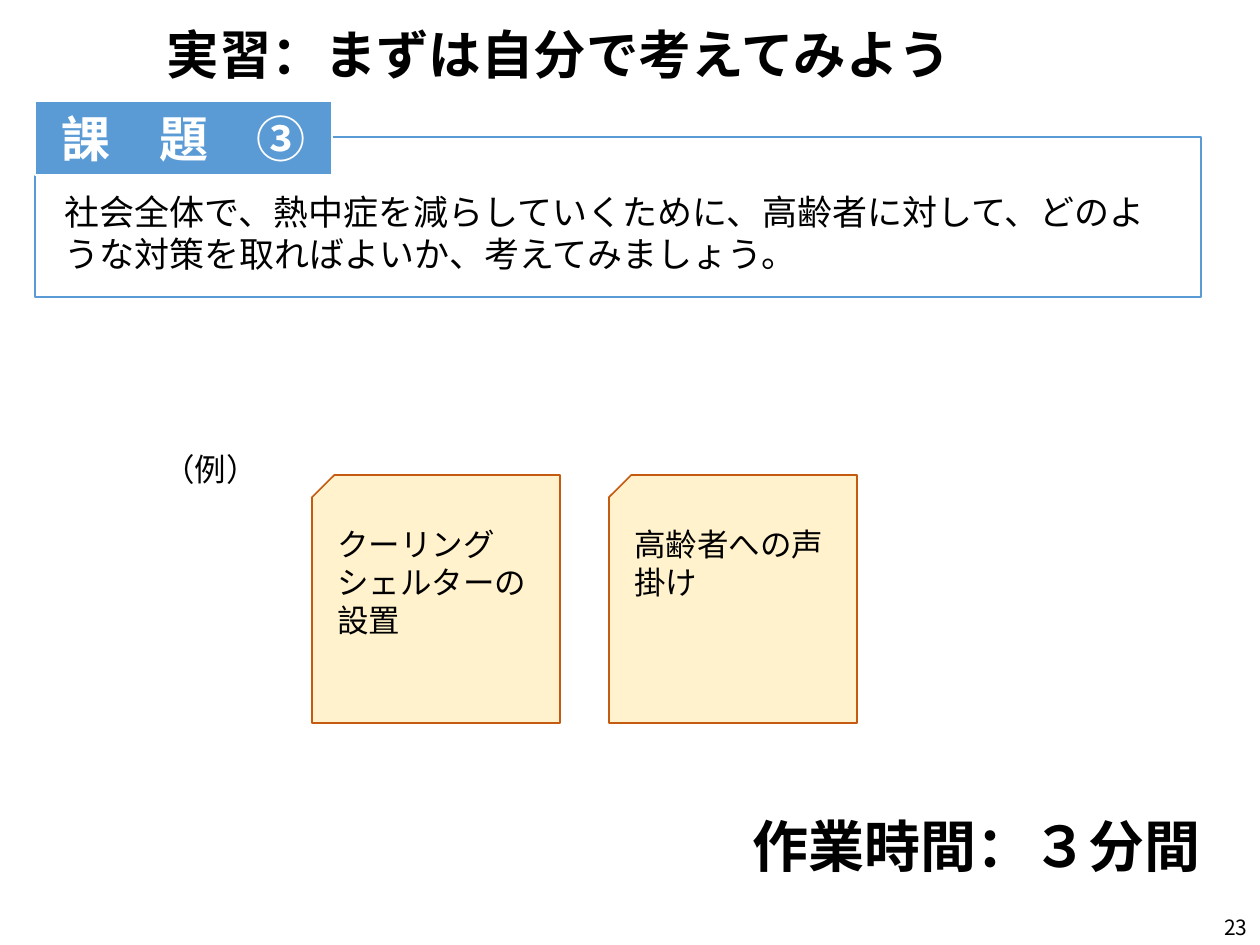
from lxml.etree import SubElement
from pptx import Presentation
from pptx.dml.color import RGBColor
from pptx.enum.shapes import MSO_SHAPE as Shape
from pptx.enum.text import MSO_ANCHOR as Anchor, MSO_AUTO_SIZE as AutoSize, PP_ALIGN as Align
from pptx.oxml.ns import qn
from pptx.util import Pt

PX = 914400 / 126
COLORS = {"text": "000000", "white": "FFFFFF", "blue": "5B9BD5",
          "note": "FFF2CC", "note_line": "C55A11"}
LATIN, JAPANESE = "Arial", "Noto Sans CJK JP"

TITLE = "実習：まずは自分で考えてみよう"
TASK_LABEL = "課　題　③"
# text, box, size, bold, alignment
TEXTS = [
    ("社会全体で、熱中症を減らしていくために、高齢者に対して、どのような対策を取ればよいか、考えてみましょう。",
     (52, 184, 1124, 97), 20, False, Align.LEFT),
    ("（例）", (151, 444, 126, 50), 18, False, Align.LEFT),
    ("作業時間：３分間", (730, 805, 493, 81), 32, True, Align.CENTER),
]
NOTES = ["クーリングシェルターの設置", "高齢者への声掛け"]
NOTE_LEFT, NOTE_TOP, NOTE_SIZE, NOTE_STEP = 312, 475, 248, 297
PAGE_NUMBER = "23"


def emu(*lengths):
    return [round(length * PX) for length in lengths]


def rgb(name):
    return RGBColor.from_string(COLORS[name])


def write(shape, text, size, bold=False, align=Align.LEFT, color="text",
          latin=LATIN, anchor=Anchor.TOP):
    frame = shape.text_frame
    frame.text = text
    frame.word_wrap = True
    frame.auto_size = AutoSize.NONE
    frame.vertical_anchor = anchor
    paragraph = frame.paragraphs[0]
    paragraph.alignment = align
    run = paragraph.runs[0]
    run.font.size, run.font.bold, run.font.name = Pt(size), bold, latin
    run.font.color.rgb = rgb(color)
    SubElement(run.font._element, qn("a:ea"), typeface=JAPANESE)
    return paragraph


def add_text(slide, box, *args, **kwargs):
    return write(slide.shapes.add_textbox(*emu(*box)), *args, **kwargs)


def add_box(slide, kind, box, fill, line, width):
    shape = slide.shapes.add_shape(kind, *emu(*box))
    shape.shadow.inherit = False
    if fill:
        shape.fill.solid()
        shape.fill.fore_color.rgb = rgb(fill)
    else:
        shape.fill.background()
    shape.line.color.rgb = rgb(line)
    shape.line.width = Pt(width)
    return shape


def main():
    presentation = Presentation()
    presentation.slide_width, presentation.slide_height = emu(1260, 945)
    slide = presentation.slides.add_slide(presentation.slide_layouts[5])

    title = slide.shapes.title
    title.left, title.top, title.width, title.height = emu(154, -4, 1106, 96)
    write(title, TITLE, 30, True, latin=JAPANESE, anchor=Anchor.BOTTOM).line_spacing = 0.9

    add_box(slide, Shape.RECTANGLE, (35, 137, 1166, 160), None, "blue", 1)
    label = add_box(slide, Shape.RECTANGLE, (35, 101, 297, 74), "blue", "white", 1.5)
    write(label, TASK_LABEL, 28, True, Align.CENTER, "white", anchor=Anchor.MIDDLE)

    for text, box, size, bold, align in TEXTS:
        add_text(slide, box, text, size, bold, align)

    for index, text in enumerate(NOTES):
        left = NOTE_LEFT + index * NOTE_STEP
        note = add_box(slide, Shape.SNIP_1_RECTANGLE,
                       (left, NOTE_TOP, NOTE_SIZE, NOTE_SIZE), "note", "note_line", 1)
        note.adjustments[0] = 0.09
        note._element.spPr.xfrm.set("flipH", "1")
        add_text(slide, (left + 13, NOTE_TOP + 44, 235, 127), text, 18)

    number = add_text(slide, (1147, 911, 113, 34), PAGE_NUMBER, 12,
                      align=Align.RIGHT, latin=JAPANESE)
    number.line_spacing = Pt(13)

    presentation.save("out.pptx")


if __name__ == "__main__":
    main()
